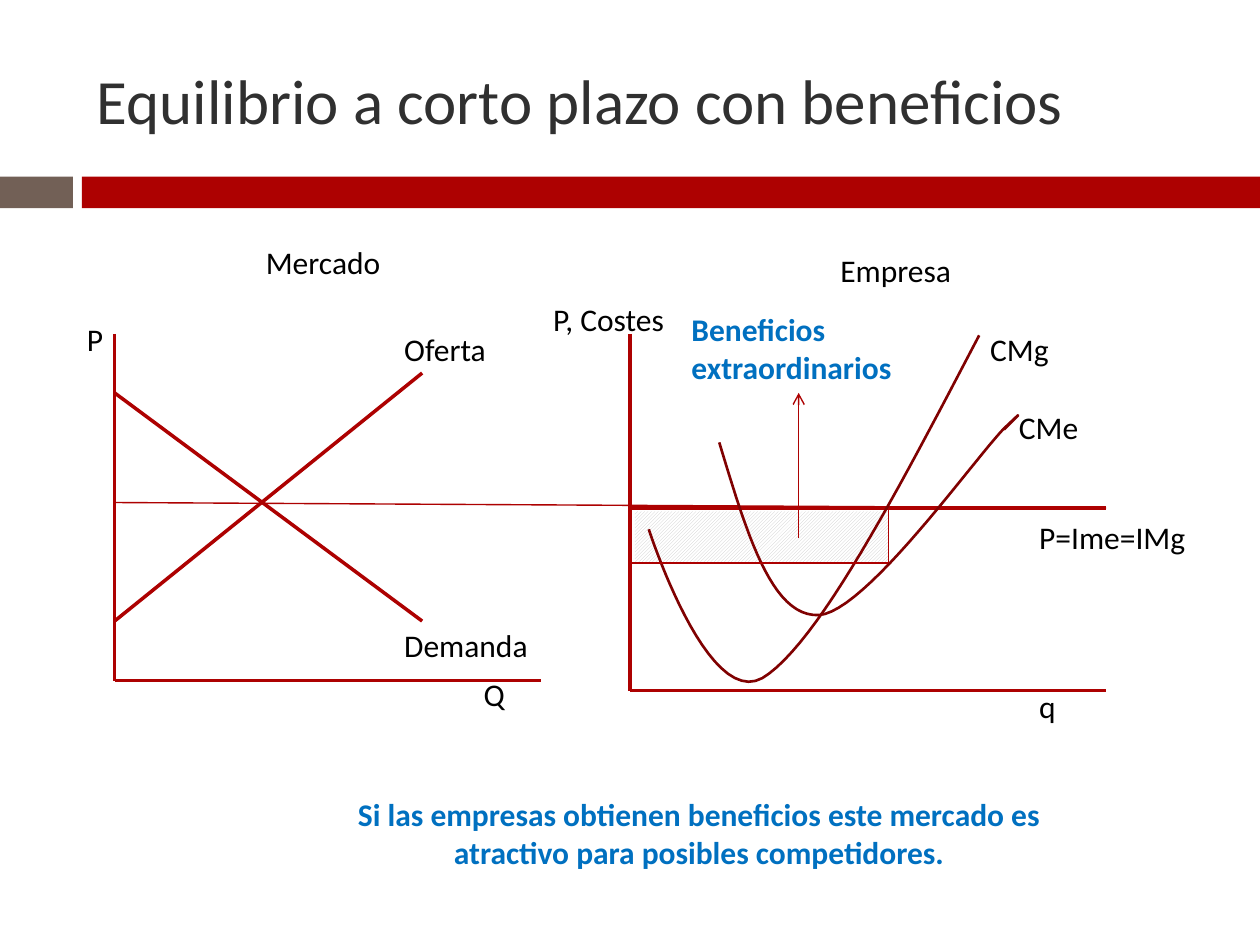
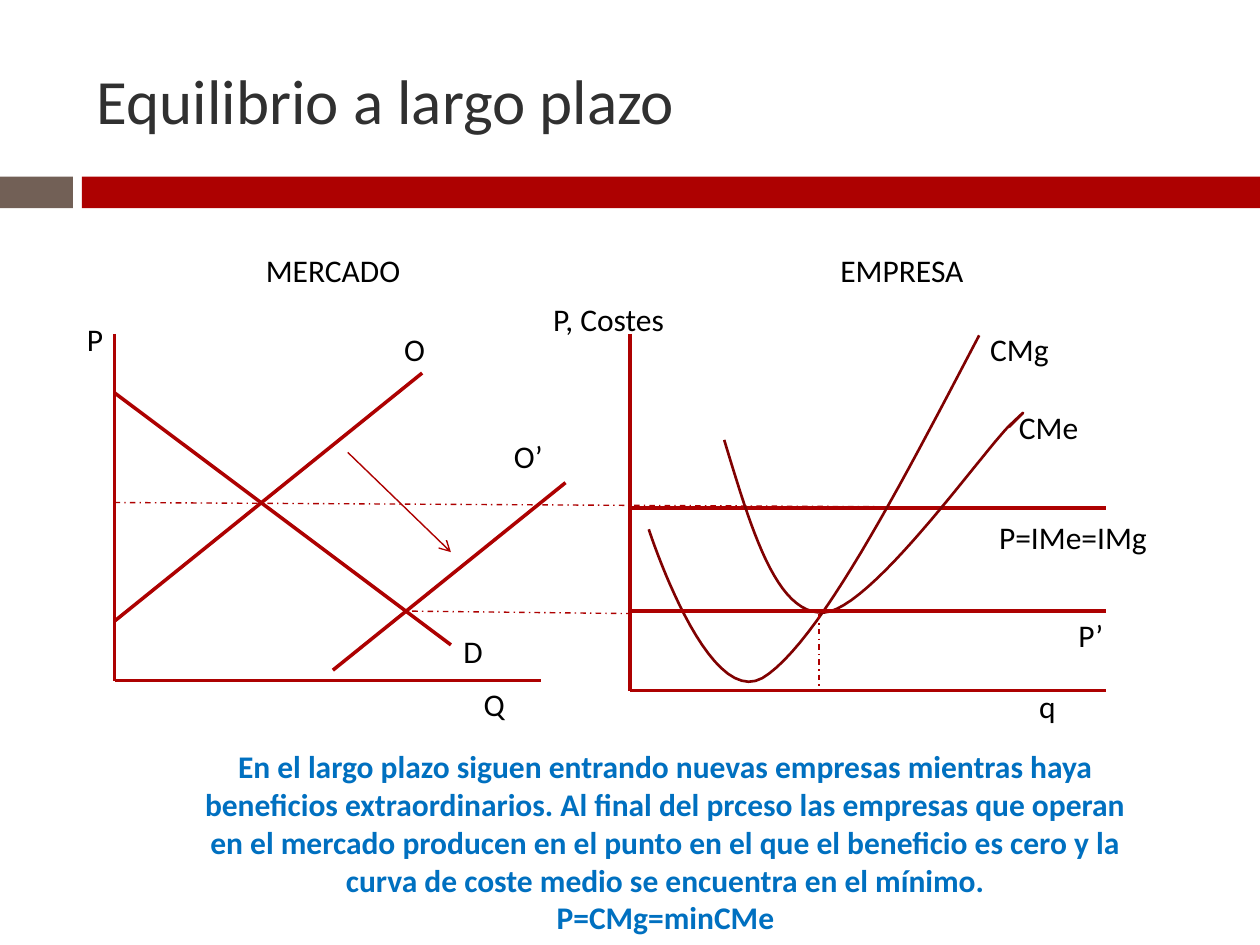
from dataclasses import dataclass
from itertools import chain

from lxml.etree import SubElement
from pptx import Presentation
from pptx.dml.color import RGBColor as RGB
from pptx.enum.dml import MSO_LINE, MSO_PATTERN
from pptx.enum.shapes import MSO_CONNECTOR, MSO_SHAPE
from pptx.enum.text import MSO_ANCHOR, MSO_AUTO_SIZE, PP_ALIGN
from pptx.oxml.ns import qn
from pptx.util import Cm, Pt


@dataclass(frozen=True)
class Theme:
    font: str = "Calibri"
    title_size: Pt = Pt(36)
    text_size: Pt = Pt(18)
    thick: Pt = Pt(2)
    curve: Pt = Pt(1.5)
    thin: Pt = Pt(0.79)
    red: RGB = RGB(0xAD, 0x01, 0x01)
    dark_red: RGB = RGB(0x80, 0x01, 0x01)
    brown: RGB = RGB(0x72, 0x60, 0x56)
    title: RGB = RGB(0x30, 0x30, 0x30)
    black: RGB = RGB(0, 0, 0)
    blue: RGB = RGB(0x00, 0x70, 0xC0)
    hatch: RGB = RGB(0xCB, 0xCB, 0xCB)
    white: RGB = RGB(0xFF, 0xFF, 0xFF)


T = Theme()


def add_line(slide, x1, y1, x2, y2, width=T.thick, dash=None, arrow=False):
    line = slide.shapes.add_connector(
        MSO_CONNECTOR.STRAIGHT, Cm(x1), Cm(y1), Cm(x2), Cm(y2))
    line.line.color.rgb = T.red
    line.line.width = width
    if dash:
        line.line.dash_style = dash
    if arrow:
        SubElement(line.line._get_or_add_ln(), qn("a:tailEnd"), type="arrow")
    SubElement(line.element.spPr, qn("a:effectLst"))


def add_text(slide, text, x, y, w=3.81, h=1.02, note=False, align=PP_ALIGN.LEFT):
    """Black label, or bold blue remark when note is set."""
    tf = slide.shapes.add_textbox(Cm(x), Cm(y), Cm(w), Cm(h)).text_frame
    tf.word_wrap = True
    tf.auto_size = MSO_AUTO_SIZE.SHAPE_TO_FIT_TEXT
    tf.text = text
    for p in tf.paragraphs:
        p.alignment = align
        p.font.name = T.font
        p.font.size = T.text_size
        p.font.bold = note
        p.font.color.rgb = T.blue if note else T.black


prs = Presentation()
prs.slide_width, prs.slide_height = Cm(25.4), Cm(19.05)
layout = prs.slide_layouts.get_by_name("Title Only")
title = layout.placeholders[0]
title.left, title.top, title.width, title.height = Cm(1.7), Cm(0.64), Cm(22.66), Cm(2.74)

short_run, long_run = slides = [prs.slides.add_slide(layout) for _ in range(2)]

# Bands shared through the master
for x, w, color in ((0, 1.47, T.brown), (1.65, 23.75, T.red)):
    band = short_run.shapes.add_shape(MSO_SHAPE.RECTANGLE, Cm(x), Cm(3.56), Cm(w), Cm(0.64))
    band.fill.solid()
    band.fill.fore_color.rgb = color
    band.line.fill.background()
    band.shadow.inherit = False
    prs.slide_master.shapes.element.insert(2, band.element)

# Hatched profit area, behind the curves
profit = short_run.shapes.add_shape(
    MSO_SHAPE.RECTANGLE, Cm(12.8), Cm(10.31), Cm(5.11), Cm(1.02))
profit.fill.patterned()
profit.fill.pattern = MSO_PATTERN.LIGHT_UPWARD_DIAGONAL
profit.fill.fore_color.rgb = T.hatch
profit.fill.back_color.rgb = T.white
profit.line.fill.background()
profit.shadow.inherit = False

# Axes, supply, price line and cost curves common to both slides
market_x, market_end, market_base = 2.31, 10.9, 13.72
firm_x, firm_end, firm_base = 12.7, 22.3, 13.92
axis_top, price, new_price = 6.73, 10.24, 12.32
common_lines = [
    (market_x, axis_top, market_x, market_base),
    (market_x, market_base, market_end, market_base),
    (firm_x, axis_top, firm_x, firm_base),
    (firm_x, firm_base, firm_end, firm_base),
    (market_x, 12.52, 8.51, 7.52),
    (firm_x, price, firm_end, price),
]
common_labels = [
    ("P", 1.5, 6.32), ("P, Costes", 10.9, 5.92), ("q", 20.7, 13.72),
    ("CMg", 19.71, 6.53), ("CMe", 20.29, 8.1),
]
# Cubic curves: a start point, then two controls and an end per segment
marginal_cost = [
    (19.74, 6.76), (18.11, 9.88), (16.48, 13), (15.37, 13.67),
    (14.25, 14.3), (13.08, 10.67), (13.08, 10.67),
]
average_cost = [
    (14.5, 8.92), (15.04, 10.69), (15.54, 12.45), (16.51, 12.4),
    (17.45, 12.34), (19.63, 9.27), (20.24, 8.64),
    (20.88, 8.03), (20.24, 8.66), (20.24, 8.66),
]
STEPS = 24

for slide, heading, price_dash, (dx, dy) in (
    (short_run, "Equilibrio a corto plazo con beneficios", None, (0, 0)),
    (long_run, "Equilibrio a largo plazo", MSO_LINE.DASH_DOT, (0.1, -0.05)),
):
    tf = slide.shapes.title.text_frame
    tf.text = heading
    tf.vertical_anchor = MSO_ANCHOR.MIDDLE
    p = tf.paragraphs[0]
    p.alignment = PP_ALIGN.LEFT
    p.font.name, p.font.size = T.font, T.title_size
    p.font.color.rgb = T.title

    for ends in common_lines:
        add_line(slide, *ends)
    add_line(slide, market_x, 10.13, firm_end, price, T.thin, price_dash)
    for label in common_labels:
        add_text(slide, *label)

    shifted = [(x + dx, y + dy) for x, y in average_cost]
    for nodes in (marginal_cost, shifted):
        points = []
        for i in range(0, len(nodes) - 1, 3):
            for t in (n / STEPS for n in range(1, STEPS + 1)):
                weights = ((1 - t) ** 3, 3 * t * (1 - t) ** 2, 3 * t * t * (1 - t), t ** 3)
                points.append(tuple(
                    Cm(sum(k * node[axis] for k, node in zip(weights, nodes[i:i + 4])))
                    for axis in (0, 1)))
        outline = slide.shapes.build_freeform(*(Cm(v) for v in nodes[0]))
        outline.add_line_segments(points, close=False)
        curve = outline.convert_to_shape()
        curve.fill.background()
        curve.line.color.rgb = T.dark_red
        curve.line.width = T.curve
        curve.shadow.inherit = False

# Short run: demand, profit area and its remark
add_line(short_run, market_x, 7.92, 8.51, 12.52)
add_line(short_run, 17.91, price, 17.91, 11.35, T.thin)
add_line(short_run, 17.91, 11.35, firm_x, 11.35, T.thin)
add_line(short_run, 16.1, 10.85, 16.1, 7.92, T.thin, arrow=True)
for label in (
    ("Mercado", 5.11, 4.78), ("Empresa", 16.69, 4.93), ("Oferta", 7.9, 6.53),
    ("Demanda", 7.9, 12.5), ("Q", 9.5, 13.49), ("P=Ime=IMg", 20.7, 10.31),
):
    add_text(short_run, *label)
add_text(short_run, "Beneficios extraordinarios", 13.69, 6.12, 4.8, 1.8, note=True)
add_text(short_run, "Si las empresas obtienen beneficios este mercado es atractivo "
         "para posibles competidores.", 5.89, 15.9, 16.41, 1.8,
         note=True, align=PP_ALIGN.CENTER)

# Long run: supply shifts right and the price falls to minimum average cost
add_line(long_run, market_x, 7.92, 9.09, 13)
add_line(long_run, 6.71, 13.51, 11.4, 9.73)
add_line(long_run, firm_x, new_price, firm_end, new_price)
add_line(long_run, 8.31, new_price, 12.8, 12.37, T.thin, MSO_LINE.DASH_DOT)
add_line(long_run, 16.51, 12.37, 16.51, firm_base, T.thin, MSO_LINE.DASH_DOT)
add_line(long_run, 7.01, 9.12, 9.09, 11.13, T.thin, arrow=True)
for label in (
    ("MERCADO", 5.11, 4.93), ("EMPRESA", 16.69, 4.93), ("O", 7.9, 6.53),
    ("D", 9.09, 12.62), ("Q", 9.5, 13.69), ("O’", 10.11, 8.69),
    ("P=IMe=IMg", 19.89, 10.31, 5.21), ("P’", 21.49, 12.29),
):
    add_text(long_run, *label)
add_text(long_run, "En el largo plazo siguen entrando nuevas empresas mientras haya "
         "beneficios extraordinarios. Al final del prceso las empresas que operan en el "
         "mercado producen en el punto en el que el beneficio es cero y la curva de coste "
         "medio se encuentra en el mínimo.\nP=CMg=minCMe", 3.71, 14.94, 19.41, 4.11,
         note=True, align=PP_ALIGN.CENTER)

prs.save("out.pptx")
